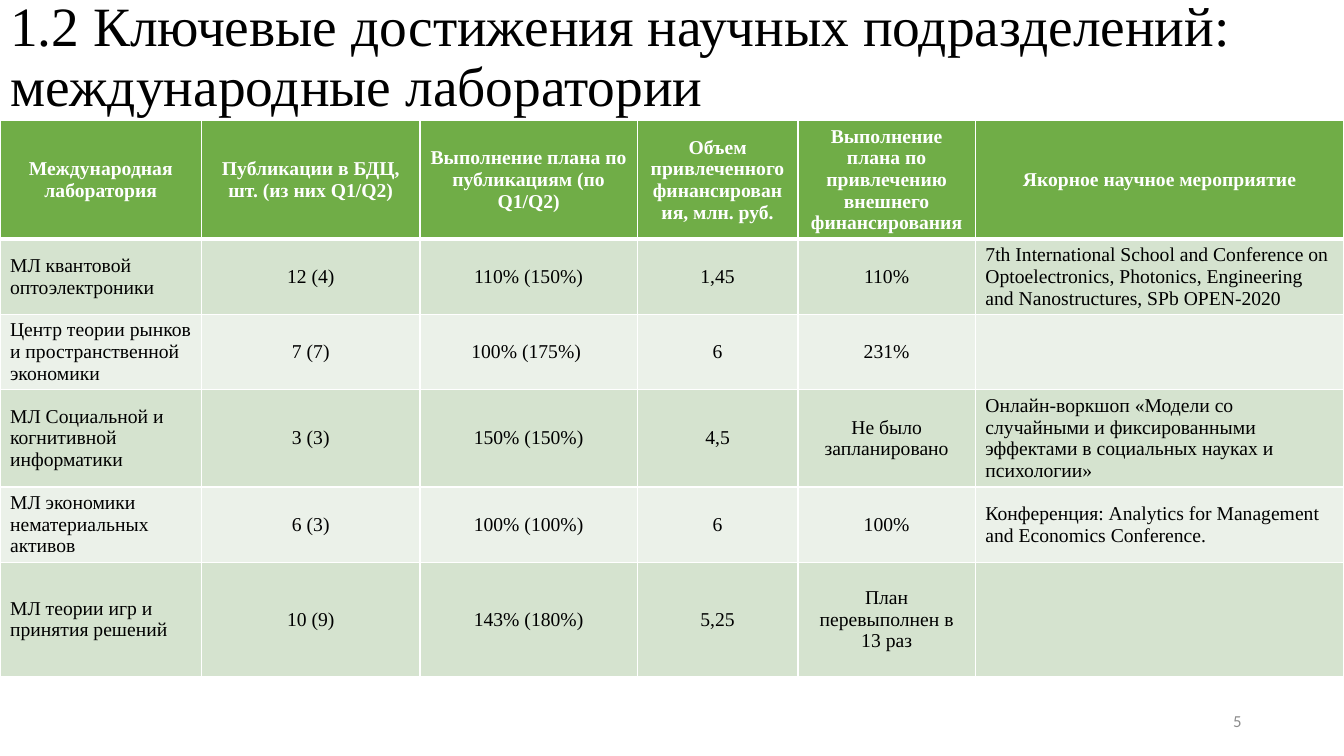
from dataclasses import astuple, dataclass

from lxml.etree import SubElement
from pptx import Presentation
from pptx.dml.color import RGBColor
from pptx.enum.text import MSO_ANCHOR as Anchor, MSO_AUTO_SIZE as AutoSize, PP_ALIGN as Align
from pptx.oxml.ns import qn
from pptx.slide import Slide
from pptx.table import _Cell as Cell
from pptx.text.text import TextFrame
from pptx.util import Emu, Pt

EMU_PER_PX = 9525
SLIDE_WIDTH, SLIDE_HEIGHT = 1280, 720
TITLE_ONLY_LAYOUT = 5

BLACK = RGBColor(0x00, 0x00, 0x00)
WHITE = RGBColor(0xFF, 0xFF, 0xFF)
HEADER_GREEN = RGBColor(0x70, 0xAD, 0x47)
ODD_ROW_GREEN = RGBColor(0xD5, 0xE3, 0xCF)
EVEN_ROW_GREEN = RGBColor(0xEB, 0xF1, 0xE9)
PAGE_GREY = RGBColor(0x8C, 0x8C, 0x8C)

COLUMN_WIDTHS = (192, 208, 207, 153, 169, 351)
ROW_HEIGHTS = (111, 71, 71, 93, 71, 109)
CENTRED_COLUMNS = range(1, 5)


@dataclass
class Laboratory:
    name: str
    publications: str
    publication_plan: str
    funding: str
    funding_plan: str
    event: str = ""


HEADERS = (
    "Международная лаборатория",
    "Публикации в БДЦ, шт. (из них Q1/Q2)",
    "Выполнение плана по публикациям (по Q1/Q2)",
    "Объем привлеченного финансирования, млн. руб.",
    "Выполнение плана по привлечению внешнего финансирования",
    "Якорное научное мероприятие",
)
LABORATORIES = (
    Laboratory("МЛ квантовой оптоэлектроники", "12 (4)", "110% (150%)", "1,45", "110%",
               "7th International School and Conference on Optoelectronics, Photonics, "
               "Engineering and Nanostructures, SPb OPEN-2020"),
    Laboratory("Центр теории рынков и пространственной экономики",
               "7 (7)", "100% (175%) ", "6", "231%"),
    Laboratory("МЛ Социальной и когнитивной информатики",
               "3 (3)", "150% (150%)", "4,5", "Не было запланировано",
               "Онлайн-воркшоп «Модели со случайными и фиксированными эффектами "
               "в социальных науках и психологии»"),
    Laboratory("МЛ экономики нематериальных активов", "6 (3)", "100% (100%)", "6", "100%",
               "Конференция: Analytics for Management and Economics Conference."),
    Laboratory("МЛ теории игр и принятия решений",
               "10 (9)", "143% (180%)", "5,25", "План перевыполнен в 13 раз"),
)


def px(length: int) -> Emu:
    return Emu(length * EMU_PER_PX)


def write_text(frame: TextFrame, text: str, *, size: float, color: RGBColor = BLACK,
               font_name: str = "Times New Roman", bold: bool = False,
               align: Align = Align.LEFT, line_spacing: float = 1.0) -> None:
    frame.word_wrap = True
    frame.vertical_anchor = Anchor.MIDDLE
    paragraph = frame.paragraphs[0]
    paragraph.alignment = align
    paragraph.line_spacing = line_spacing
    if text:
        run = paragraph.add_run()
        run.text = text
        run.font.name = font_name
        run.font.size = Pt(size)
        run.font.bold = bold
        run.font.color.rgb = color


def set_borders(cell: Cell, bottom_width: int) -> None:
    properties = cell._tc.get_or_add_tcPr()
    for side, width in (("L", 1), ("R", 1), ("T", 1), ("B", bottom_width)):
        line = SubElement(properties, qn(f"a:ln{side}"), w=str(Pt(width)))
        fill = SubElement(line, qn("a:solidFill"))
        SubElement(fill, qn("a:srgbClr"), val=str(WHITE))


def add_title(slide: Slide) -> None:
    title = slide.shapes.title
    title.left, title.top, title.width, title.height = map(px, (0, -14, 1245, 139))
    title.text_frame.auto_size = AutoSize.NONE
    write_text(title.text_frame,
               "1.2 Ключевые достижения научных подразделений: международные лаборатории",
               size=39.6, line_spacing=0.9)


def add_laboratory_table(slide: Slide) -> None:
    rows = [HEADERS, *map(astuple, LABORATORIES)]
    table = slide.shapes.add_table(len(rows), len(HEADERS), px(0), px(115),
                                   px(SLIDE_WIDTH), px(sum(ROW_HEIGHTS))).table
    for column, width in zip(table.columns, COLUMN_WIDTHS):
        column.width = px(width)
    for row_index, texts in enumerate(rows):
        is_header = row_index == 0
        table.rows[row_index].height = px(ROW_HEIGHTS[row_index])
        band = ODD_ROW_GREEN if row_index % 2 else EVEN_ROW_GREEN
        for column_index, text in enumerate(texts):
            cell = table.cell(row_index, column_index)
            centred = is_header or column_index in CENTRED_COLUMNS
            set_borders(cell, bottom_width=3 if is_header else 1)
            cell.fill.solid()
            cell.fill.fore_color.rgb = HEADER_GREEN if is_header else band
            cell.vertical_anchor = Anchor.MIDDLE
            write_text(cell.text_frame, text, size=14, bold=is_header,
                       color=WHITE if is_header else BLACK,
                       align=Align.CENTER if centred else Align.LEFT)


def add_page_number(slide: Slide) -> None:
    box = slide.shapes.add_textbox(px(904), px(667), px(288), px(38))
    write_text(box.text_frame, "5", size=12, color=PAGE_GREY,
               font_name="Calibri", align=Align.RIGHT)


def main() -> None:
    presentation = Presentation()
    presentation.slide_width = px(SLIDE_WIDTH)
    presentation.slide_height = px(SLIDE_HEIGHT)
    slide = presentation.slides.add_slide(presentation.slide_layouts[TITLE_ONLY_LAYOUT])
    add_title(slide)
    add_laboratory_table(slide)
    add_page_number(slide)
    presentation.save("out.pptx")


if __name__ == "__main__":
    main()
